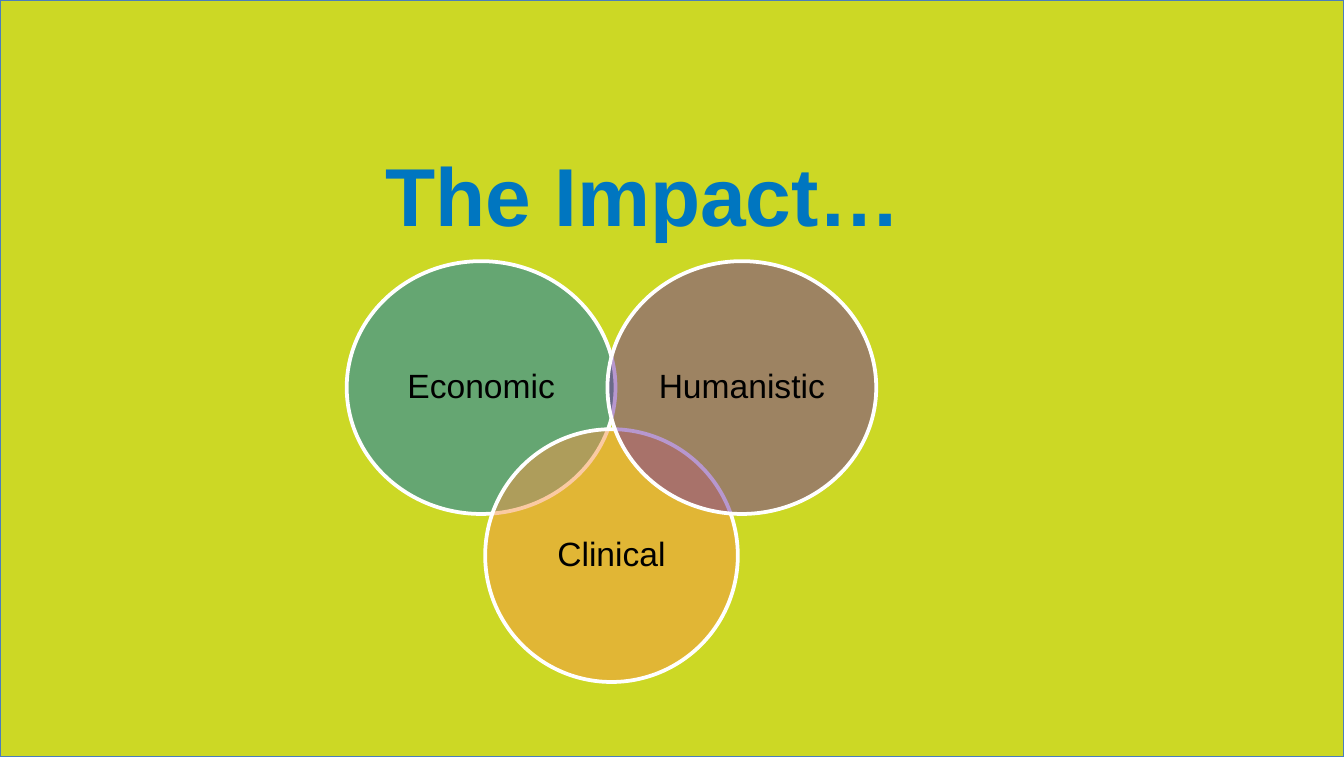
from dataclasses import dataclass

from lxml import etree
from pptx import Presentation
from pptx import util as u
from pptx.dml.color import RGBColor
from pptx.enum import shapes, text
from pptx.oxml.ns import qn

WIDTH, HEIGHT = 10, 5.63
LABEL_SHARE = 0.71
LABEL_INSET = 0.07

LIME = RGBColor(0xCC, 0xD8, 0x25)
EDGE_BLUE = RGBColor(0x4B, 0x7E, 0xBC)
BLUE = RGBColor(0x00, 0x76, 0xC0)
ORANGE = RGBColor(0xF7, 0x96, 0x46)
PURPLE = RGBColor(0x70, 0x30, 0xA0)
WHITE = RGBColor(0xFF, 0xFF, 0xFF)
BLACK = RGBColor(0x00, 0x00, 0x00)


@dataclass
class Impact:
    label: str
    center_x: float
    center_y: float
    width: float
    height: float
    color: RGBColor


IMPACTS = [
    Impact("Economic", 0.358, 0.512, 0.2, 0.334, BLUE),
    Impact("Clinical", 0.455, 0.734, 0.188, 0.334, ORANGE),
    Impact("Humanistic", 0.552, 0.512, 0.2, 0.334, PURPLE),
]


def centered_box(impact: Impact, share: float = 1) -> tuple:
    width, height = impact.width * share, impact.height * share
    return (
        u.Inches((impact.center_x - width / 2) * WIDTH),
        u.Inches((impact.center_y - height / 2) * HEIGHT),
        u.Inches(width * WIDTH),
        u.Inches(height * HEIGHT),
    )


def write(frame, words: str, *, size: float, color: RGBColor,
          bold: bool = False, line_spacing: float = 1) -> None:
    frame.word_wrap = True
    frame.auto_size = text.MSO_AUTO_SIZE.NONE
    frame.vertical_anchor = text.MSO_ANCHOR.MIDDLE
    paragraph = frame.paragraphs[0]
    paragraph.alignment = text.PP_ALIGN.CENTER
    paragraph.line_spacing = line_spacing
    run = paragraph.add_run()
    run.text = words
    run.font.name = "Arial"
    run.font.size = u.Pt(size)
    run.font.bold = bold
    run.font.color.rgb = color


def add_filled(container, preset, box: tuple, fill: RGBColor,
               line: RGBColor, line_width: float):
    shape = container.add_shape(preset, *box)
    shape.shadow.inherit = False
    shape.fill.solid()
    shape.fill.fore_color.rgb = fill
    shape.line.color.rgb = line
    shape.line.width = u.Pt(line_width)
    return shape


def draw_impact(container, impact: Impact) -> None:
    circle = add_filled(container, shapes.MSO_SHAPE.OVAL, centered_box(impact),
                        impact.color, WHITE, 2)
    fill_color = circle._element.spPr.find(qn("a:solidFill"))[0]
    etree.SubElement(fill_color, qn("a:alpha")).set("val", "50000")

    label = container.add_textbox(*centered_box(impact, LABEL_SHARE)).text_frame
    label.margin_left = label.margin_right = u.Inches(LABEL_INSET)
    label.margin_top = label.margin_bottom = u.Inches(LABEL_INSET)
    write(label, impact.label, size=18, color=BLACK, line_spacing=0.9)


def main() -> None:
    deck = Presentation()
    deck.slide_width, deck.slide_height = u.Inches(WIDTH), u.Inches(HEIGHT)
    slide = deck.slides.add_slide(deck.slide_layouts[5])

    title = slide.shapes.title
    title.left, title.top = u.Inches(0.42), u.Inches(0.38)
    title.width, title.height = u.Inches(8.74), u.Inches(2.12)
    write(title.text_frame, "The Impact…", size=44, color=BLUE, bold=True)

    backdrop = add_filled(slide.shapes, shapes.MSO_SHAPE.RECTANGLE,
                          (0, 0, deck.slide_width, deck.slide_height),
                          LIME, EDGE_BLUE, 0.75)
    title._element.addprevious(backdrop._element)

    venn = slide.shapes.add_group_shape()
    for impact in IMPACTS:
        draw_impact(venn.shapes, impact)

    deck.save("out.pptx")


if __name__ == "__main__":
    main()
